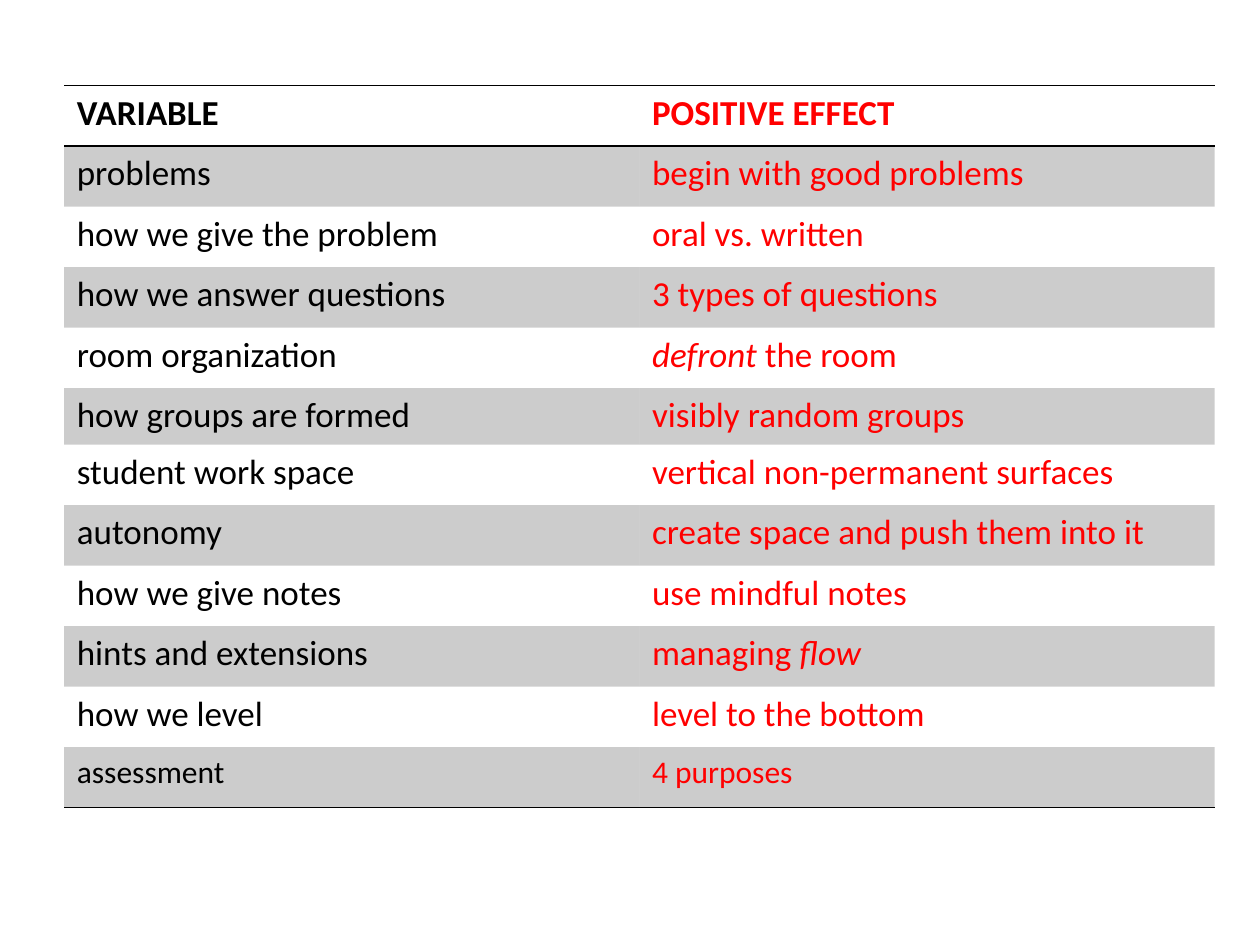
import pptx
import pptx.dml.color
import pptx.oxml
import pptx.oxml.ns
import pptx.util
from pptx.util import Inches

BLACK = pptx.dml.color.RGBColor(0x00, 0x00, 0x00)
RED = pptx.dml.color.RGBColor(0xFF, 0x00, 0x00)
FONT = "Calibri"
PLAIN_STYLE = "{2D5ABB26-0587-4C30-8999-92F81FD0307C}"
ROW_HEIGHT = 0.48
SHORT_ROW, SHORT_HEIGHT = 5, 0.45

ROWS = [
    ("VARIABLE", ["POSITIVE EFFECT"]),
    ("problems", ["begin with good problems"]),
    ("how we give the problem", ["oral vs. written"]),
    ("how we answer questions", ["3 types of questions"]),
    ("room organization", ["*defront", " the room"]),
    ("how groups are formed", ["visibly random groups"]),
    ("student work space", ["vertical non-permanent surfaces"]),
    ("autonomy", ["create space and push them into it"]),
    ("how we give notes", ["use mindful notes"]),
    ("hints and extensions", ["managing ", "*flow"]),
    ("how we level", ["level to the bottom"]),
    ("assessment", ["4 purposes"]),
]


def add_border(cell, side):
    ln = pptx.oxml.parse_xml(
        f'<a:{side} {pptx.oxml.ns.nsdecls("a")} w="12700"><a:solidFill>'
        f'<a:srgbClr val="{BLACK}"/></a:solidFill></a:{side}>')
    cell._tc.get_or_add_tcPr().append(ln)


def shade(cell):
    cell.fill.solid()
    cell.fill.fore_color.rgb = BLACK
    color = cell._tc.tcPr.find(".//" + pptx.oxml.ns.qn("a:solidFill") + "[last()]")
    color = cell._tc.tcPr.findall(pptx.oxml.ns.qn("a:solidFill"))[0][0]
    color.append(pptx.oxml.parse_xml(
        f'<a:alpha {pptx.oxml.ns.nsdecls("a")} val="20000"/>'))


def write_cell(cell, parts, color, size, bold):
    p = cell.text_frame.paragraphs[0]
    for part in parts:
        r = p.add_run()
        r.text = part.lstrip("*")
        r.font.name = FONT
        r.font.size = pptx.util.Pt(size)
        r.font.bold = bold
        r.font.italic = part.startswith("*")
        r.font.color.rgb = color


def add_effects_table(slide, left, top, width):
    heights = [Inches(SHORT_HEIGHT if i == SHORT_ROW else ROW_HEIGHT)
               for i in range(len(ROWS))]
    frame = slide.shapes.add_table(len(ROWS), 2, left, top, width, sum(heights))
    table = frame.table
    table.first_row = False
    table.horz_banding = False
    table._tbl.tblPr.find(pptx.oxml.ns.qn("a:tableStyleId")).text = PLAIN_STYLE
    last = len(ROWS) - 1
    for i, (variable, effect) in enumerate(ROWS):
        table.rows[i].height = heights[i]
        for j, (parts, color) in enumerate([([variable], BLACK), (effect, RED)]):
            cell = table.cell(i, j)
            write_cell(cell, parts, color, 18 if i == last else 20, i == 0)
            if i == 0:
                add_border(cell, "lnT")
            if i in (0, last):
                add_border(cell, "lnB")
            if i % 2:
                shade(cell)
            else:
                cell.fill.background()


def main():
    prs = pptx.Presentation()
    prs.slide_width = Inches(10)
    prs.slide_height = Inches(7.5)
    slide = prs.slides.add_slide(prs.slide_layouts[6])
    add_effects_table(slide, Inches(0.51), Inches(0.68), Inches(9.13))
    prs.save("out.pptx")


if __name__ == "__main__":
    main()
